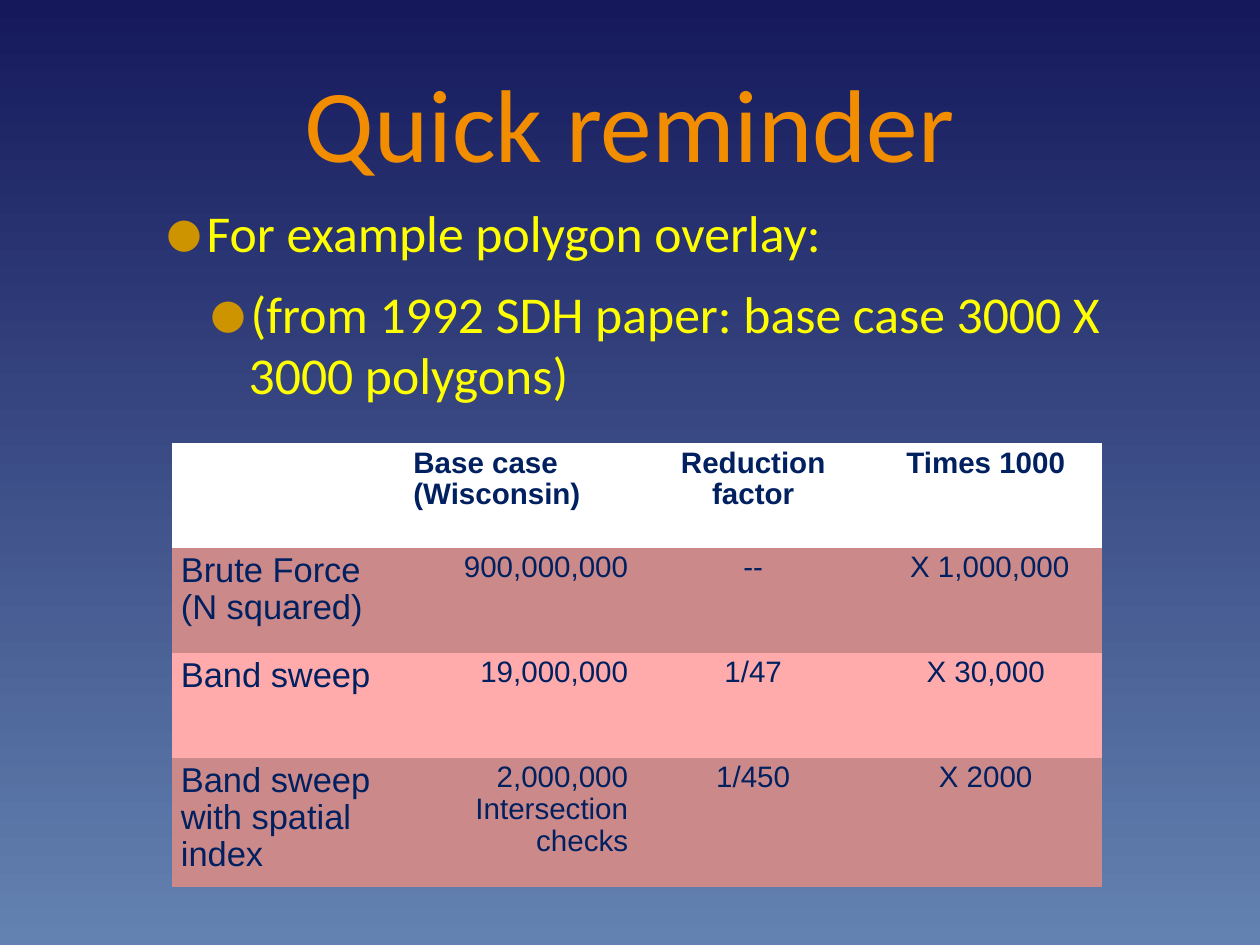
from dataclasses import dataclass
from lxml.etree import SubElement as Sub
from pptx import Presentation
from pptx.dml.color import RGBColor as RGB
from pptx.enum.text import MSO_ANCHOR as Anchor, PP_ALIGN as Align
from pptx.oxml.ns import qn
from pptx.util import Pt

PX = 10321  # EMU per px
NO_STYLE = "{2D5ABB26-0587-4C30-8999-92F81FD0307C}"


@dataclass
class Theme:
    low: str = "6382B1"
    high: str = "15195C"
    title: str = "F28D00"
    body: str = "FFFF00"
    dot: str = "CD9400"
    ink: str = "002060"
    bands: tuple = ("FFFFFF", "CC8989", "FFABAB", "CC8989")
    text: str = "Calibri"
    grid: str = "Arial"
    big: int = 84
    mid: int = 42
    label: int = 28
    cell: int = 24


def style(para, face, size, color, bold=False):
    for run in para.runs:
        font = run.font
        font.name, font.size, font.bold = face, Pt(size), bold
        font.color.rgb = RGB.from_string(color)


def add_box(x, y, w, h):
    frame = slide.shapes.add_textbox(x * PX, y * PX, w * PX, h * PX).text_frame
    frame.word_wrap = True
    frame.margin_top = frame.margin_bottom = 0
    return frame


theme = Theme()
deck = Presentation()
deck.slide_width, deck.slide_height = 1260 * PX, 945 * PX
slide = deck.slides.add_slide(deck.slide_layouts[6])

fill = slide.background.fill
fill.gradient()
fill.gradient_angle = 90
for stop, color in zip(fill.gradient_stops, (theme.low, theme.high)):
    stop.color.rgb = RGB.from_string(color)

# Title
head = add_box(123, 30, 1014, 183)
head.vertical_anchor = Anchor.MIDDLE
para = head.paragraphs[0]
para.text = "Quick reminder"
para.alignment = Align.CENTER
style(para, theme.text, theme.big, theme.title)

# Bullets: text, left indent in px, space after in points
points = [
    ("For example polygon overlay:", 73, 16),
    ("(from 1992 SDH paper: base case 3000 X 3000 polygons)", 117, 26),
]
body = add_box(123, 201, 1014, 207)
for i, (text, left, after) in enumerate(points):
    para = body.add_paragraph() if i else body.paragraphs[0]
    para.text = text
    para.level = i
    para.line_spacing, para.space_after = Pt(50), Pt(after)
    style(para, theme.text, theme.mid, theme.body)
    props = para._p.get_or_add_pPr()
    props.set("marL", str(left * PX))
    props.set("indent", str(-42 * PX))
    Sub(Sub(props, qn("a:buClr")), qn("a:srgbClr"), val=theme.dot)
    Sub(props, qn("a:buSzPct"), val="171000")
    Sub(props, qn("a:buFont"), typeface=theme.text)
    Sub(props, qn("a:buChar"), char="•")

# Table
rows = [
    ("", "Base case (Wisconsin)", "Reduction factor", "Times 1000"),
    ("Brute Force (N squared)", "900,000,000", "--", " X 1,000,000"),
    ("Band sweep", "19,000,000", "1/47", "X 30,000"),
    ("Band sweep with spatial index", "2,000,000\nIntersection checks", "1/450", "X 2000"),
]
sides = (Align.LEFT, Align.RIGHT, Align.CENTER, Align.CENTER)
table = slide.shapes.add_table(4, 4, 172 * PX, 443 * PX, 930 * PX, 420 * PX).table
table._tbl.tblPr.find(qn("a:tableStyleId")).text = NO_STYLE
table.rows[3].height = 124 * PX
for r, row in enumerate(rows):
    for c, text in enumerate(row):
        cell = table.cell(r, c)
        cell.fill.solid()
        cell.fill.fore_color.rgb = RGB.from_string(theme.bands[r])
        cell.text_frame.text = text
        size = theme.cell if c else theme.label
        for para in cell.text_frame.paragraphs:
            para.alignment = Align.LEFT if r == 0 and c == 1 else sides[c]
            para.line_spacing = 0.97
            style(para, theme.grid, size, theme.ink, bold=r == 0)

deck.save("out.pptx")
